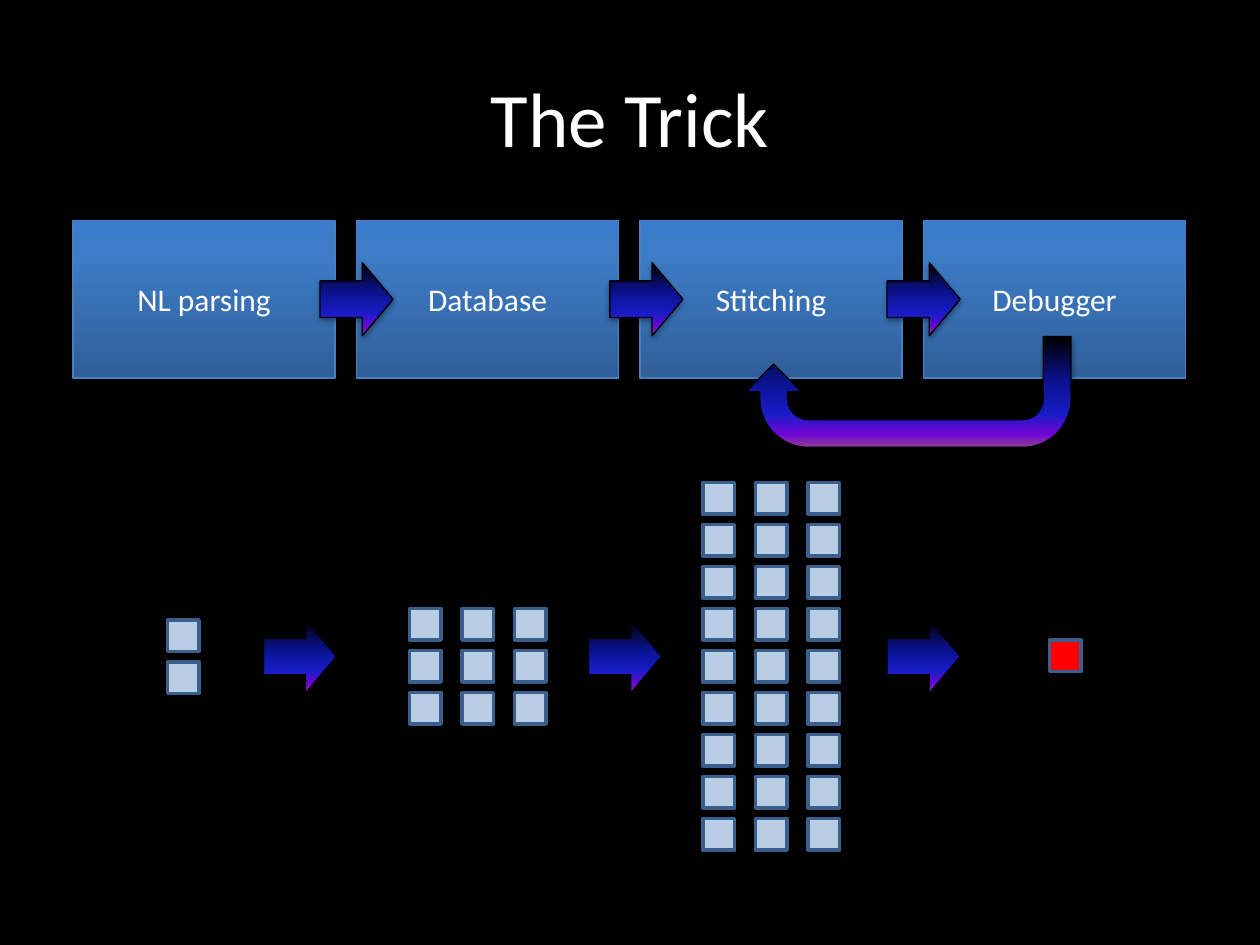
from lxml import etree
from pptx import Presentation
from pptx.dml.color import RGBColor
from pptx.enum.shapes import MSO_SHAPE
from pptx.enum.text import MSO_ANCHOR, PP_ALIGN
from pptx.oxml.ns import qn
from pptx.util import Inches, Pt

RECTANGLE = MSO_SHAPE.RECTANGLE
RIGHT_ARROW = MSO_SHAPE.RIGHT_ARROW
U_TURN_ARROW = MSO_SHAPE.U_TURN_ARROW
MIDDLE = MSO_ANCHOR.MIDDLE
CENTER = PP_ALIGN.CENTER

FONT = "Calibri"
STAGES = ["NL parsing", "Database", "Stitching", "Debugger"]
STAGE_GRADIENT = [(0, "2F5F99"), (80, "3D7CC7"), (100, "3A7CCB")]
ARROW_GRADIENT = [(0, "000000"), (40, "0A128C"), (70, "181CC7"),
                  (88, "7005D4"), (100, "8C3D91")]
SQUARE = 0.25
COLUMN_STEP = 5 / 12
ROW_STEP = 1 / 3
ARROW_SIZE = 0.58


def color(hex_string):
    return RGBColor.from_string(hex_string)


def set_text(shape, text, size):
    frame = shape.text_frame
    frame.word_wrap = True
    frame.vertical_anchor = MIDDLE
    frame.text = text
    paragraph = frame.paragraphs[0]
    paragraph.alignment = CENTER
    font = paragraph.runs[0].font
    font.name = FONT
    font.size = Pt(size)
    font.color.rgb = color("FFFFFF")


def set_gradient(shape, stops):
    """Fill from bottom to top with any number of (percent, colour) stops."""
    shape.fill.gradient()
    shape.fill.gradient_angle = 90
    stop_list = shape._element.spPr.find(qn("a:gradFill")).find(qn("a:gsLst"))
    for old_stop in list(stop_list):
        stop_list.remove(old_stop)
    for percent, hex_string in stops:
        stop = etree.SubElement(stop_list, qn("a:gs"), pos=str(percent * 1000))
        etree.SubElement(stop, qn("a:srgbClr"), val=hex_string)


def set_shadow(shape):
    effects = shape._element.spPr.find(qn("a:effectLst"))
    shadow = etree.SubElement(effects, qn("a:outerShdw"),
                              blurRad=str(Pt(3.1)), dist=str(Pt(1.8)),
                              dir="5400000", rotWithShape="0")
    shade = etree.SubElement(shadow, qn("a:srgbClr"), val="000000")
    etree.SubElement(shade, qn("a:alpha"), val="35000")


def add_outlined(slide, kind, box, line_color, line_width):
    shape = slide.shapes.add_shape(kind, *(Inches(length) for length in box))
    shape.shadow.inherit = False
    shape.line.color.rgb = color(line_color)
    shape.line.width = Pt(line_width)
    return shape


def add_glossy(slide, kind, box, stops, line_color):
    shape = add_outlined(slide, kind, box, line_color, 0.75)
    set_gradient(shape, stops)
    set_shadow(shape)
    return shape


def add_arrow(slide, left, top):
    box = (left, top, ARROW_SIZE, ARROW_SIZE)
    arrow = add_glossy(slide, RIGHT_ARROW, box, ARROW_GRADIENT, "000000")
    arrow.adjustments[0] = 0.5
    arrow.adjustments[1] = 0.422
    # The flip puts the dark end of the gradient on top
    arrow._element.spPr.find(qn("a:xfrm")).set("flipV", "1")


def add_title(slide, box):
    title = slide.shapes.add_textbox(*(Inches(length) for length in box))
    set_text(title, "The Trick", 44)


def add_pipeline(slide, left, top, width, height):
    # Stage boxes
    gap = 0.17
    stage_width = (width - gap * (len(STAGES) - 1)) / len(STAGES)
    for index, name in enumerate(STAGES):
        box = (left + index * (stage_width + gap), top, stage_width, height)
        stage = add_glossy(slide, RECTANGLE, box, STAGE_GRADIENT, "4B7EBC")
        set_text(stage, name, 18)

    # Arrows between stages
    for arrow_left in (2.54, 4.84, 7.04):
        add_arrow(slide, arrow_left, top + (height - ARROW_SIZE) / 2)

    # Feedback from the debugger to stitching
    box = (5.92, top + 0.92, 2.58, 0.88)
    feedback = add_glossy(slide, U_TURN_ARROW, box, ARROW_GRADIENT, "000000")
    feedback.rotation = 180


def add_squares(slide, left, top, rows, columns, fill_color="B9CDE5"):
    for row in range(rows):
        for column in range(columns):
            box = (left + column * COLUMN_STEP, top + row * ROW_STEP,
                   SQUARE, SQUARE)
            square = add_outlined(slide, RECTANGLE, box, "3A5F8C", 2)
            square.fill.solid()
            square.fill.fore_color.rgb = color(fill_color)


def add_candidates(slide):
    # Candidates grow stage by stage, until the debugger keeps one
    add_squares(slide, 1.33, 4.92, rows=2, columns=1)
    add_squares(slide, 3.25, 4.83, rows=3, columns=3)
    add_squares(slide, 5.58, 3.83, rows=9, columns=3)
    add_squares(slide, 8.33, 5.08, rows=1, columns=1, fill_color="FF0000")
    for arrow_left in (2.09, 4.67, 7.04):
        add_arrow(slide, arrow_left, 4.92)


def main():
    presentation = Presentation()
    presentation.slide_width = Inches(10)
    presentation.slide_height = Inches(7.5)
    slide = presentation.slides.add_slide(presentation.slide_layouts[6])
    slide.background.fill.solid()
    slide.background.fill.fore_color.rgb = color("000000")

    add_title(slide, (0.5, 0.3, 9, 1.25))
    add_pipeline(slide, 0.58, 1.75, 8.83, 1.25)
    add_candidates(slide)
    presentation.save("out.pptx")


if __name__ == "__main__":
    main()
